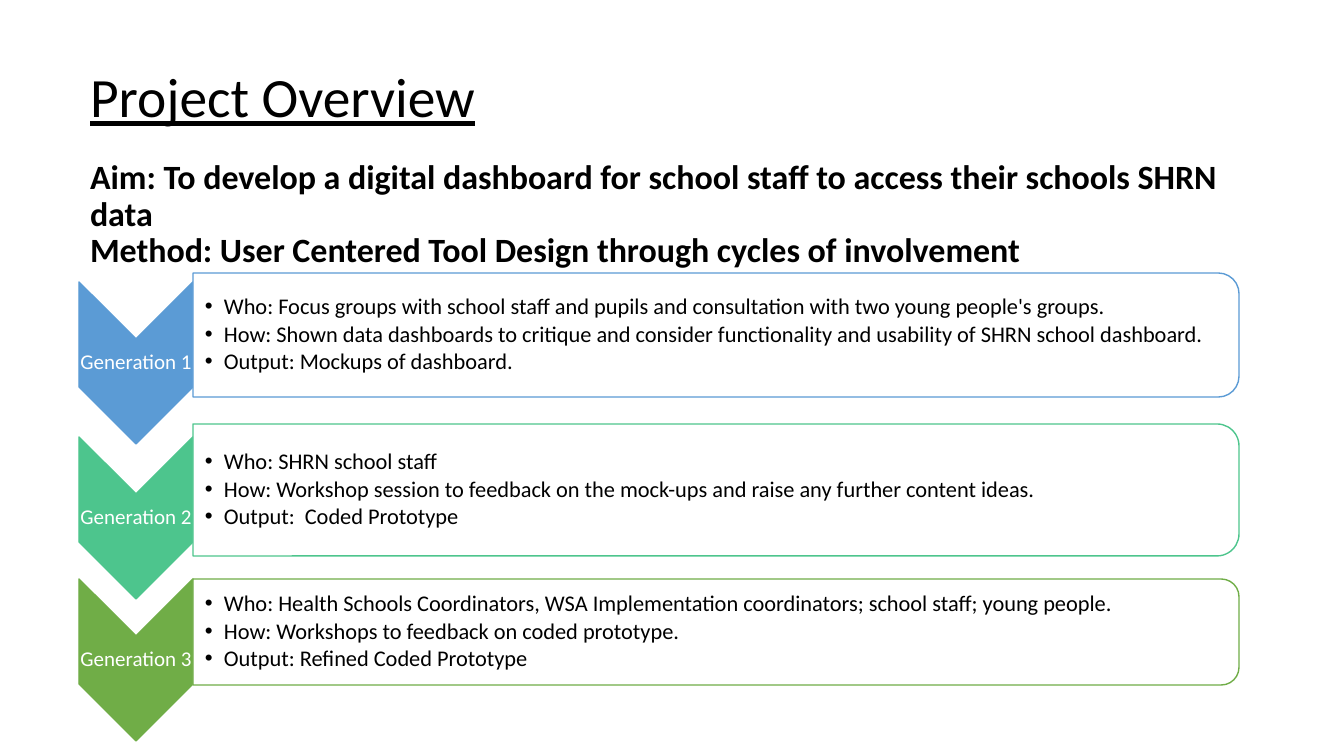
import pptx
import pptx.util
import pptx.dml.color
import pptx.enum.shapes
import pptx.enum.text
import pptx.oxml
import pptx.oxml.ns
import lxml.etree

RGBColor = pptx.dml.color.RGBColor
MSO_SHAPE = pptx.enum.shapes.MSO_SHAPE
MSO_ANCHOR = pptx.enum.text.MSO_ANCHOR
PP_ALIGN = pptx.enum.text.PP_ALIGN

BLACK = RGBColor(0x00, 0x00, 0x00)
WHITE = RGBColor(0xFF, 0xFF, 0xFF)
BLUE = RGBColor(0x5B, 0x9B, 0xD5)
TEAL = RGBColor(0x4D, 0xC5, 0x8D)
GREEN = RGBColor(0x70, 0xAD, 0x47)

EMU_PER_PX = 914400 / 100.8
FONT = "Calibri"
CHEVRON_LEFT, CHEVRON_WIDTH, CHEVRON_HEIGHT = 79, 114, 162
PANEL_LEFT, PANEL_WIDTH = 193, 1046

GENERATIONS = [
    ("Generation 1", BLUE, 282, 273, 124, [
        "Who: Focus groups with school staff and pupils and consultation with two young people's groups.",
        "How: Shown data dashboards to critique and consider functionality and usability of SHRN school dashboard.",
        "Output: Mockups of dashboard.",
    ]),
    ("Generation 2", TEAL, 437, 424, 132, [
        "Who: SHRN school staff",
        "How: Workshop session to feedback on the mock-ups and raise any further content ideas.",
        "Output:  Coded Prototype",
    ]),
    ("Generation 3", GREEN, 579, 579, 106, [
        "Who: Health Schools Coordinators, WSA Implementation coordinators; school staff; young people.",
        "How: Workshops to feedback on coded prototype.",
        "Output: Refined Coded Prototype",
    ]),
]


def px(length):
    return pptx.util.Emu(round(length * EMU_PER_PX))


def format_paragraph(paragraph, size, color, bold=False, underline=False):
    paragraph.line_spacing = 0.9
    paragraph.font.name = FONT
    paragraph.font.size = pptx.util.Pt(size)
    paragraph.font.color.rgb = color
    paragraph.font.bold = bold
    paragraph.font.underline = underline


def add_heading(slide):
    heading = slide.shapes.title
    heading.left, heading.top = px(80), px(65)
    heading.width, heading.height = px(1211), px(210)
    frame = heading.text_frame
    frame.word_wrap = True
    frame.auto_size = pptx.enum.text.MSO_AUTO_SIZE.NONE
    frame.vertical_anchor = MSO_ANCHOR.TOP
    frame.text = "\n".join([
        "Project Overview",
        "Aim: To develop a digital dashboard for school staff to access their schools SHRN data",
        "Method: User Centered Tool Design through cycles of involvement",
    ])
    name, aim, method = frame.paragraphs
    format_paragraph(name, 39.6, BLACK, underline=True)
    for statement in (aim, method):
        format_paragraph(statement, 24.3, BLACK, bold=True)
    aim.space_before = pptx.util.Pt(21.5)
    method.space_before = pptx.util.Pt(0)
    for paragraph in frame.paragraphs:
        paragraph.alignment = PP_ALIGN.LEFT


def add_turned_shape(slide, preset, left, top, width, height, fill, line):
    shift = (width - height) / 2
    shape = slide.shapes.add_shape(
        preset, px(left + shift), px(top - shift), px(height), px(width))
    shape.rotation = 90
    shape.shadow.inherit = False
    shape.fill.solid()
    shape.fill.fore_color.rgb = fill
    shape.line.color.rgb = line
    shape.line.width = pptx.util.Pt(1)
    return shape


def set_opacity(shape, percent):
    color = shape.fill._xPr.find(".//" + pptx.oxml.ns.qn("a:srgbClr"))
    alpha = lxml.etree.SubElement(color, pptx.oxml.ns.qn("a:alpha"))
    alpha.set("val", str(percent * 1000))


def add_text(slide, left, top, width, height, lines, size, color, space_after, inset_left=1):
    box = slide.shapes.add_textbox(px(left), px(top), px(width), px(height))
    frame = box.text_frame
    frame.word_wrap = True
    frame.vertical_anchor = MSO_ANCHOR.MIDDLE
    frame.margin_left = px(inset_left)
    frame.margin_top = frame.margin_right = frame.margin_bottom = px(1)
    frame.text = "\n".join(lines)
    for paragraph in frame.paragraphs:
        format_paragraph(paragraph, size, color)
        paragraph.space_after = pptx.util.Pt(space_after)
    return frame.paragraphs


def add_bullet(paragraph):
    properties = paragraph._p.get_or_add_pPr()
    properties.set("lvl", "1")
    properties.set("marL", str(px(19)))
    properties.set("indent", str(px(-19)))
    bullet_font = pptx.oxml.parse_xml(
        f'<a:buFont {pptx.oxml.ns.nsdecls("a")} typeface="Arial"/>')
    bullet = pptx.oxml.parse_xml(
        f'<a:buChar {pptx.oxml.ns.nsdecls("a")} char="•"/>')
    default_run = properties.find(pptx.oxml.ns.qn("a:defRPr"))
    default_run.addprevious(bullet_font)
    default_run.addprevious(bullet)


def add_generation(slide, label, color, chevron_top, panel_top, panel_height, details):
    add_turned_shape(slide, MSO_SHAPE.CHEVRON, CHEVRON_LEFT, chevron_top,
                     CHEVRON_WIDTH, CHEVRON_HEIGHT, color, color)
    caption, = add_text(slide, CHEVRON_LEFT, chevron_top + 57, CHEVRON_WIDTH, 48,
                        [label], 15, WHITE, 5)
    caption.alignment = PP_ALIGN.CENTER
    panel = add_turned_shape(slide, MSO_SHAPE.ROUND_2_SAME_RECTANGLE, PANEL_LEFT, panel_top,
                             PANEL_WIDTH, panel_height, WHITE, color)
    set_opacity(panel, 90)
    for detail in add_text(slide, PANEL_LEFT, panel_top + 6, PANEL_WIDTH - 6,
                           panel_height - 12, details, 16, BLACK, 2.4, inset_left=12):
        add_bullet(detail)


def main():
    presentation = pptx.Presentation()
    presentation.slide_width, presentation.slide_height = px(1344), px(756)
    slide = presentation.slides.add_slide(presentation.slide_layouts[5])
    add_heading(slide)
    for generation in GENERATIONS:
        add_generation(slide, *generation)
    presentation.save("out.pptx")


if __name__ == "__main__":
    main()
